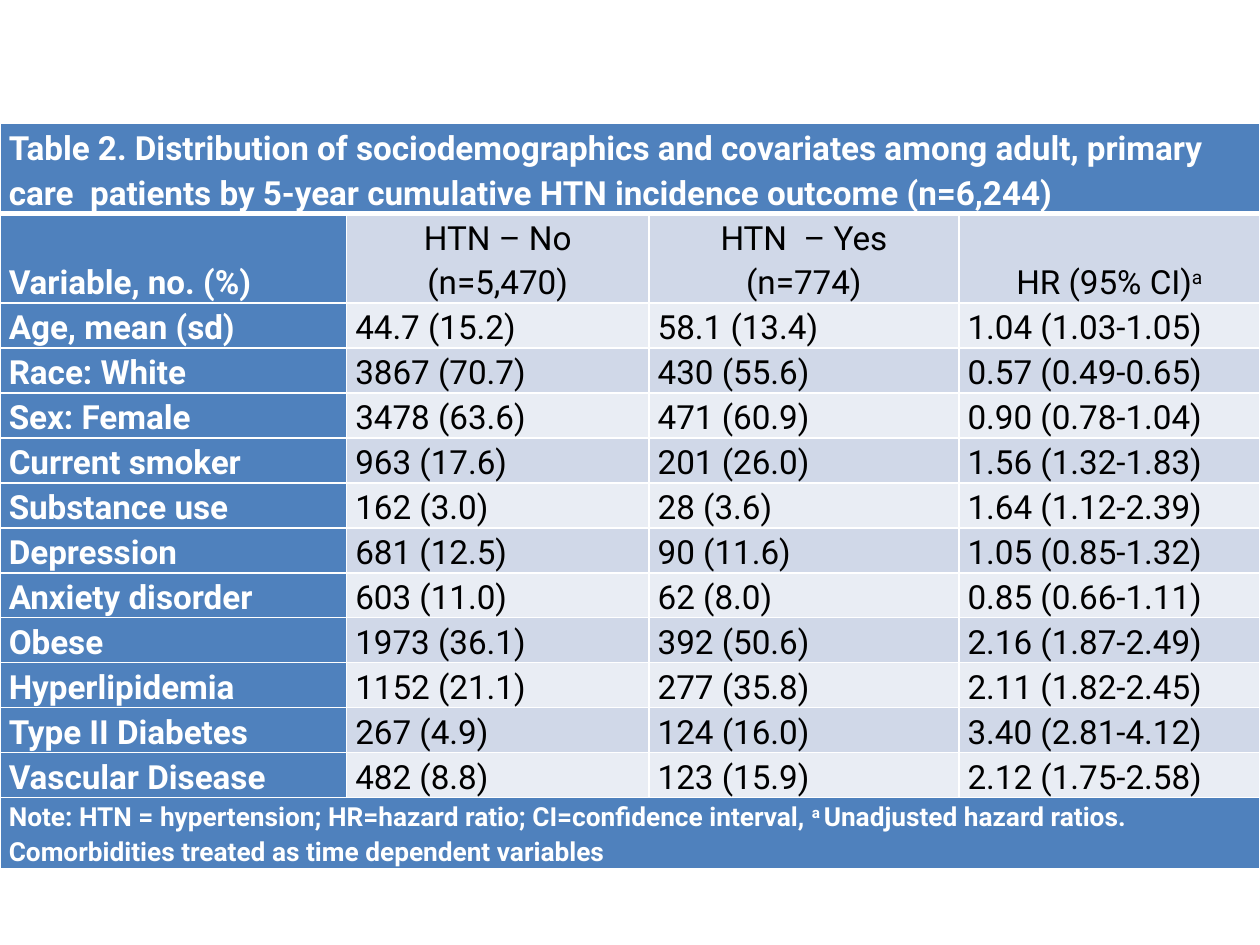
from lxml import etree
from pptx import Presentation
from pptx.dml.color import RGBColor
from pptx.enum import text
from pptx.oxml.ns import qn
from pptx.util import Inches, Pt

COLORS = {"blue": "4F81BD", "band_dark": "D0D8E8", "band_light": "E9EDF4",
          "white": "FFFFFF", "black": "000000"}
TITLE = ("Table 2. Distribution of sociodemographics and covariates among adult, primary "
         "care  patients by 5-year cumulative HTN incidence outcome (n=6,244)")
HEADER = ["Variable, no. (%)", "HTN – No\n(n=5,470)", "HTN  – Yes\n(n=774)", "HR (95% CI)"]
DATA = [
    ["Age, mean (sd)", "44.7 (15.2)", "58.1 (13.4)", "1.04 (1.03-1.05)"],
    ["Race: White", "3867 (70.7)", "430 (55.6)", "0.57 (0.49-0.65)"],
    ["Sex: Female", "3478 (63.6)", "471 (60.9)", "0.90 (0.78-1.04)"],
    ["Current smoker", "963 (17.6)", "201 (26.0)", "1.56 (1.32-1.83)"],
    ["Substance use", "162 (3.0)", "28 (3.6)", "1.64 (1.12-2.39)"],
    ["Depression", "681 (12.5)", "90 (11.6)", "1.05 (0.85-1.32)"],
    ["Anxiety disorder", "603 (11.0)", "62 (8.0)", "0.85 (0.66-1.11)"],
    ["Obese", "1973 (36.1)", "392 (50.6)", "2.16 (1.87-2.49)"],
    ["Hyperlipidemia", "1152 (21.1)", "277 (35.8)", "2.11 (1.82-2.45)"],
    ["Type II Diabetes", "267 (4.9)", "124 (16.0)", "3.40 (2.81-4.12)"],
    ["Vascular Disease", "482 (8.8)", "123 (15.9)", "2.12 (1.75-2.58)"],
]
NOTE = ["Note: HTN = hypertension; HR=hazard ratio; CI=confidence interval, ", "a ",
        "Unadjusted hazard ratios. Comorbidities treated as time dependent variables"]


def set_borders(cell, widths):
    """Draw white borders; widths maps a side (L, R, T, B) to points."""
    tcPr = cell._tc.get_or_add_tcPr()
    for i, (side, width) in enumerate(widths.items()):
        ln = etree.Element(qn("a:ln" + side), w=str(Pt(width)))
        fill = etree.SubElement(ln, qn("a:solidFill"))
        etree.SubElement(fill, qn("a:srgbClr"), val=COLORS["white"])
        tcPr.insert(i, ln)


prs = Presentation()
prs.slide_width, prs.slide_height = Inches(10), Inches(7.5)
s = prs.slides.add_slide(prs.slide_layouts[6])

# Table grid
rows = [[TITLE, "", "", ""], HEADER, *DATA, ["", "", "", ""]]
last = len(rows) - 1
table = s.shapes.add_table(len(rows), 4, 0, Inches(0.98), Inches(10), Inches(6.04)).table
for column, width in zip(table.columns, [2.75, 2.4, 2.46, 2.39]):
    column.width = Inches(width)
for row, height in zip(table.rows, [0.69, 0.69] + [0.34] * len(DATA) + [0.54]):
    row.height = Inches(height)

# Wording: the title and the note run across all columns
for i, values in enumerate(rows):
    for j, value in enumerate(values):
        table.cell(i, j).text_frame.text = value
for i in (0, last):
    table.cell(i, 0).merge(table.cell(i, 3))
p = table.cell(last, 0).text_frame.paragraphs[0]
for part in NOTE:
    p.add_run().text = part
header_p = table.cell(1, 3).text_frame.paragraphs[0]
header_p.add_run().text = "a"

# Cell formatting
for i in range(len(rows)):
    band = "band_light" if i % 2 == 0 else "band_dark"
    for j in range(4):
        cell = table.cell(i, j)
        label = j == 0 or i in (0, last)
        cell.margin_left = cell.margin_right = Inches(0.07)
        cell.margin_top = cell.margin_bottom = 0
        cell.vertical_anchor = text.MSO_ANCHOR.BOTTOM if i == 1 else text.MSO_ANCHOR.TOP
        cell.fill.solid()
        cell.fill.fore_color.rgb = RGBColor.from_string(COLORS["blue" if label else band])
        set_borders(cell, {"L": 1, "R": 1, "T": 3 if i == 1 else 1, "B": 3 if i == 0 else 1})
        for p in cell.text_frame.paragraphs:
            p.line_spacing = 1.15
            if i == 1 and j > 0:
                p.alignment = text.PP_ALIGN.CENTER
            for r in p.runs:
                r.font.name = "Roboto"
                r.font.size = Pt(15 if i == last else 19)
                r.font.bold = label
                r.font.color.rgb = RGBColor.from_string(COLORS["white" if label else "black"])

# Superscript footnote marks
for r in (header_p.runs[1], table.cell(last, 0).text_frame.paragraphs[0].runs[1]):
    r.font._element.set("baseline", "30000")

prs.save("out.pptx")
